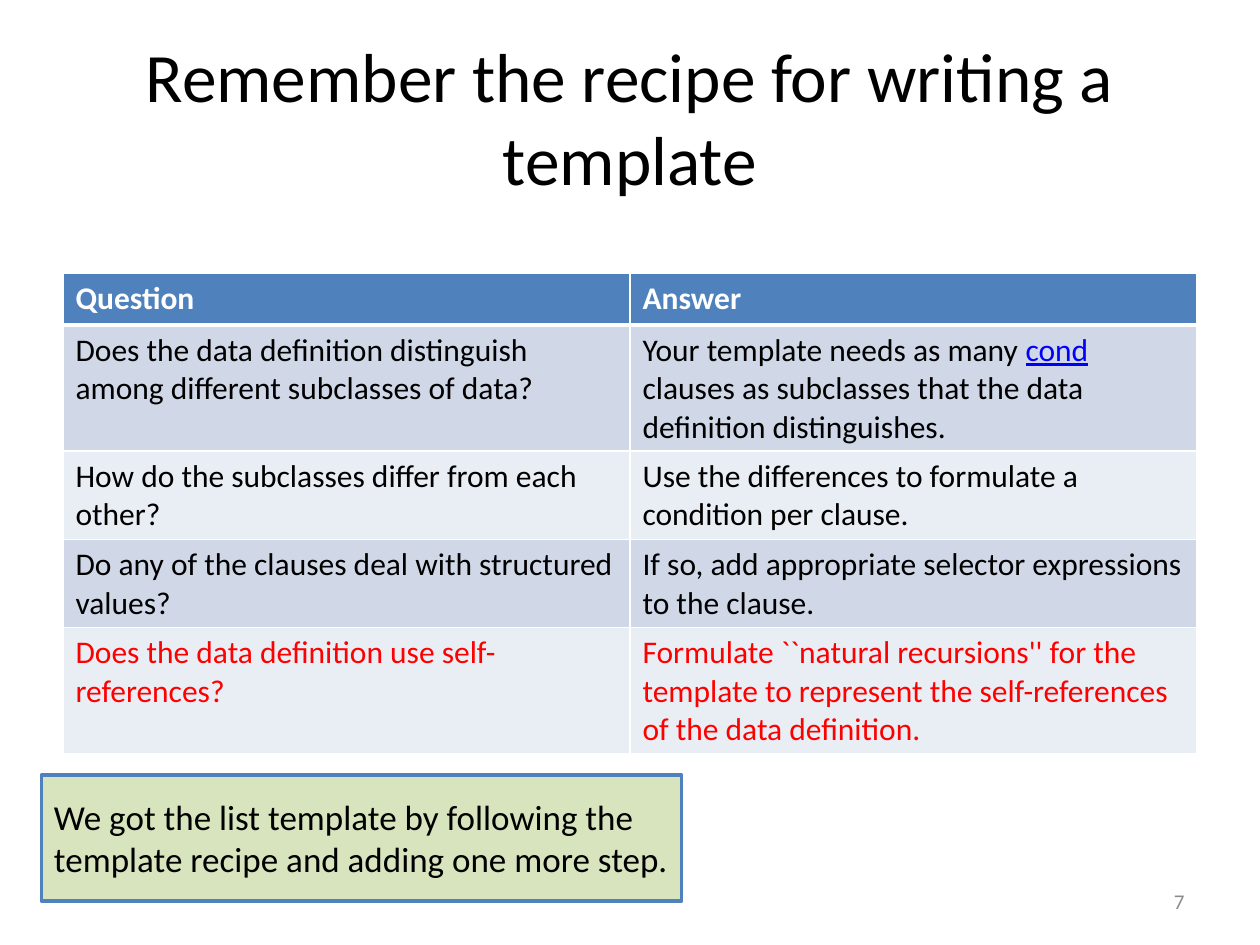
import pptx
import pptx.dml.color
import pptx.enum.shapes
import pptx.enum.text
import pptx.oxml
import pptx.oxml.ns
import pptx.util

Inches = pptx.util.Inches
Pt = pptx.util.Pt
ALIGN = pptx.enum.text.PP_ALIGN
MIDDLE = pptx.enum.text.MSO_ANCHOR.MIDDLE

COLORS = {
    "text": "000000",
    "white": "FFFFFF",
    "header": "4F81BD",
    "band_dark": "D0D8E8",
    "band_light": "E9EDF4",
    "new_step": "FF0000",
    "link": "0000FF",
    "note": "D7E4BD",
    "number": "8C8C8C",
}

# Each cell is a list of (text, format) runs
HEADER = {"color": "white", "bold": True}
NEW_STEP = {"color": "new_step"}
RECIPE = [
    ([("Question", HEADER)], [("Answer", HEADER)]),
    ([("Does the data definition distinguish among different subclasses of data?", {})],
     [("Your template needs as many ", {}),
      ("cond", {"color": "link", "underline": True}),
      (" clauses as subclasses that the data definition distinguishes.", {})]),
    ([("How do the subclasses differ from each other?", {})],
     [("Use the differences to formulate a condition per clause.", {})]),
    ([("Do any of the clauses deal with structured values?", {})],
     [("If so, add appropriate selector expressions to the clause.", {})]),
    ([("Does the data definition use self-references?", NEW_STEP)],
     [("Formulate ``natural recursions'' for the template to represent "
       "the self-references of the data definition.", NEW_STEP)]),
]


def rgb(name):
    return pptx.dml.color.RGBColor.from_string(COLORS[name])


def write_runs(text_frame, runs, size, align=ALIGN.LEFT):
    paragraph = text_frame.paragraphs[0]
    paragraph.alignment = align
    for text, overrides in runs:
        run = paragraph.add_run()
        run.text = text
        values = {"name": "Calibri", "size": Pt(size), "bold": False,
                  "color": "text", **overrides}
        run.font.color.rgb = rgb(values.pop("color"))
        for attribute, value in values.items():
            setattr(run.font, attribute, value)


def add_text(slide, box, text, size, align, color="text"):
    text_frame = slide.shapes.add_textbox(*map(Inches, box)).text_frame
    text_frame.word_wrap = True
    text_frame.vertical_anchor = MIDDLE
    write_runs(text_frame, [(text, {"color": color})], size, align)


def set_borders(cell, widths):
    """Draw white borders; they must come before the fill in the cell."""
    properties = cell._tc.get_or_add_tcPr()
    for index, (side, points) in enumerate(widths.items()):
        border = pptx.oxml.parse_xml(
            f'<a:{side} {pptx.oxml.ns.nsdecls("a")} w="{Pt(points)}">'
            f'<a:solidFill><a:srgbClr val="{COLORS["white"]}"/></a:solidFill>'
            f'</a:{side}>')
        properties.insert(index, border)


def add_recipe_table(slide, box, row_height):
    left, top, width, height = map(Inches, box)
    frame = slide.shapes.add_table(len(RECIPE), 2, left, top, width, height)
    table = frame.table
    for row_index, row in enumerate(RECIPE):
        # Rows grow to fit their text
        table.rows[row_index].height = Inches(row_height)
        if row_index == 0:
            fill = "header"
        else:
            fill = "band_dark" if row_index % 2 else "band_light"
        for column_index, runs in enumerate(row):
            cell = table.cell(row_index, column_index)
            cell.fill.solid()
            cell.fill.fore_color.rgb = rgb(fill)
            set_borders(cell, {"lnL": 1, "lnR": 1,
                               "lnT": 3 if row_index == 1 else 1,
                               "lnB": 3 if row_index == 0 else 1})
            write_runs(cell.text_frame, runs, 18)
    frame.height = height


def add_note(slide, box, text):
    shape = slide.shapes.add_shape(
        pptx.enum.shapes.MSO_SHAPE.RECTANGLE, *map(Inches, box))
    shape.shadow.inherit = False
    shape.fill.solid()
    shape.fill.fore_color.rgb = rgb("note")
    shape.line.color.rgb = rgb("header")
    shape.line.width = Pt(2)
    shape.text_frame.word_wrap = True
    shape.text_frame.vertical_anchor = MIDDLE
    write_runs(shape.text_frame, [(text, {})], 20)


def main():
    presentation = pptx.Presentation()
    presentation.slide_width = Inches(10)
    presentation.slide_height = Inches(7.5)
    slide = presentation.slides.add_slide(presentation.slide_layouts[6])

    # Title
    add_text(slide, (0.5, 0.3, 9, 1.25),
             "Remember the recipe for writing a template", 39.6, ALIGN.CENTER)
    # Questions and answers
    add_recipe_table(slide, (0.5, 2.17, 9, 3.81), 0.41)
    # Closing remark
    add_note(slide, (0.33, 6.15, 5.08, 1),
             "We got the list template by following the template recipe "
             "and adding one more step.")
    # Slide number
    add_text(slide, (7.17, 6.95, 2.33, 0.4), "7", 12, ALIGN.RIGHT, "number")

    presentation.save("out.pptx")


if __name__ == "__main__":
    main()
